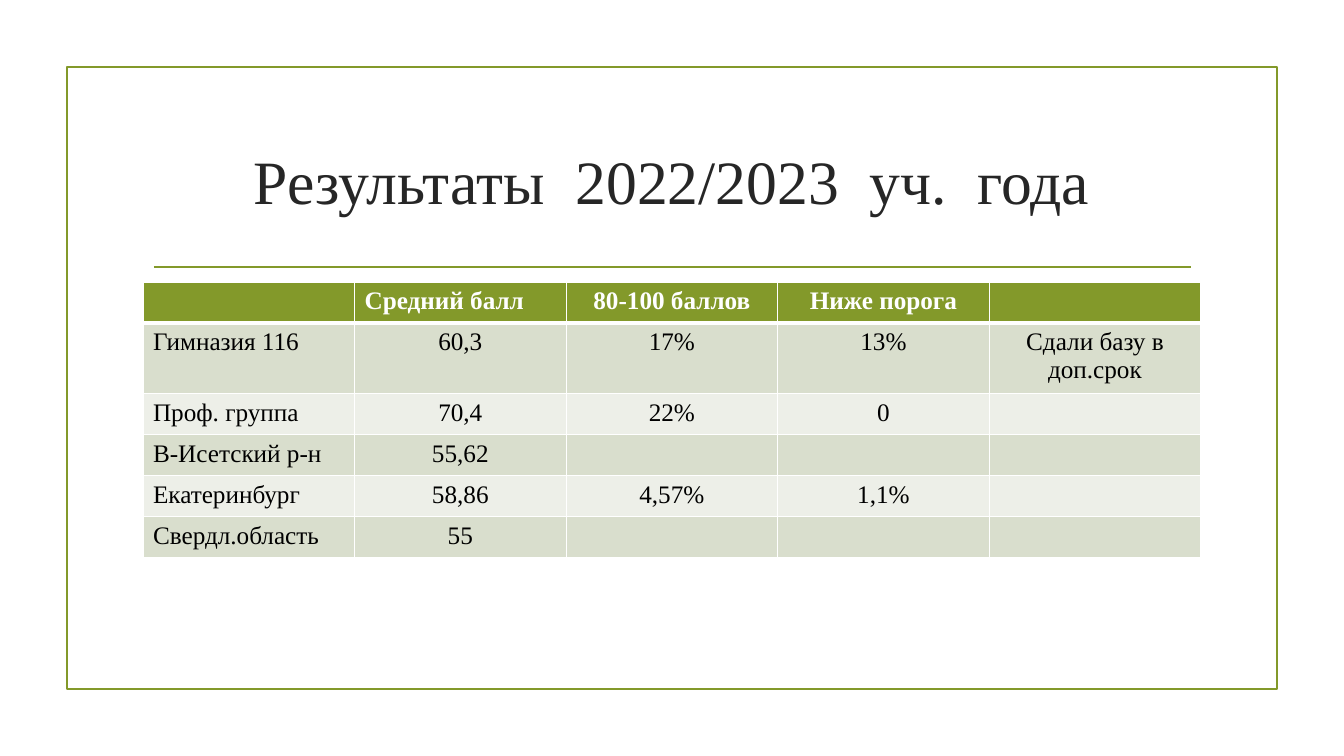
import lxml.etree
import pptx
import pptx.dml.color
import pptx.enum.shapes
import pptx.enum.text
import pptx.oxml.ns
import pptx.util

RGBColor = pptx.dml.color.RGBColor
GREEN = RGBColor(0x83, 0x99, 0x2A)
SAGE = RGBColor(0xD9, 0xDE, 0xCD)
PALE = RGBColor(0xED, 0xEF, 0xE8)
WHITE = RGBColor(0xFF, 0xFF, 0xFF)
BLACK = RGBColor(0, 0, 0)
DARK = RGBColor(0x26, 0x26, 0x26)

ALIGN = pptx.enum.text.PP_ALIGN
ANCHOR = pptx.enum.text.MSO_ANCHOR
SCALE = 914400 / 100.8
qn = pptx.oxml.ns.qn

SCORES = [
    ["", "Средний балл", "80-100 баллов", "Ниже порога", ""],
    ["Гимназия 116", "60,3", "17%", "13%", "Сдали базу в доп.срок"],
    ["Проф. группа", "70,4", "22%", "0", ""],
    ["В-Исетский р-н", "55,62", "", "", ""],
    ["Екатеринбург", "58,86", "4,57%", "1,1%", ""],
    ["Свердл.область", "55", "", "", ""],
]


def px(count):
    return pptx.util.Emu(round(count * SCALE))


def box(*sides):
    return [px(side) for side in sides]


def write(frame, text, size=18, color=BLACK, bold=False, align=ALIGN.CENTER):
    line = frame.paragraphs[0]
    line.alignment = align
    font = line.font
    if text:
        run = line.add_run()
        run.text = text
        font = run.font
    font.name = "Times New Roman"
    font.size = pptx.util.Pt(size)
    font.bold = bold
    font.color.rgb = color


def stroke(shape):
    shape.line.color.rgb = GREEN
    shape.line.width = pptx.util.Pt(1.25)


def add_frame(slide):
    kind = pptx.enum.shapes.MSO_SHAPE.RECTANGLE
    frame = slide.shapes.add_shape(kind, *box(67, 67, 1210, 622))
    frame.shadow.inherit = False
    frame.fill.background()
    stroke(frame)


def add_rule(slide):
    kind = pptx.enum.shapes.MSO_CONNECTOR.STRAIGHT
    rule = slide.shapes.add_connector(kind, *box(154, 267, 1191, 267))
    stroke(rule)
    lxml.etree.SubElement(rule._element.spPr, qn("a:effectLst"))


def add_title(slide, text):
    frame = slide.shapes.add_textbox(*box(143, 108, 1058, 144)).text_frame
    frame.word_wrap = True
    frame.vertical_anchor = ANCHOR.MIDDLE
    write(frame, text, size=44, color=DARK)


def edge(cell, **widths):
    props = cell._tc.get_or_add_tcPr()
    for place, side in enumerate("LRTB"):
        width = pptx.util.Pt(widths.get(side, 1))
        line = lxml.etree.Element(qn("a:ln" + side), w=str(width))
        fill = lxml.etree.SubElement(line, qn("a:solidFill"))
        lxml.etree.SubElement(fill, qn("a:srgbClr"), val=str(WHITE))
        props.insert(place, line)


def add_grid(slide, rows):
    wide = len(rows[0])
    shape = slide.shapes.add_table(
        len(rows), wide, *box(143, 282, 1058, 41 * len(rows)))
    grid = shape.table
    for r, row in enumerate(rows):
        head = r == 0
        for c, text in enumerate(row):
            cell = grid.cell(r, c)
            left = c == 0 or head and c == 1
            write(cell.text_frame, text, bold=head,
                  color=WHITE if head else BLACK,
                  align=ALIGN.LEFT if left else ALIGN.CENTER)
            cell.fill.solid()
            cell.fill.fore_color.rgb = GREEN if head else (PALE, SAGE)[r % 2]
            edge(cell, B=3 if head else 1, T=3 if r == 1 else 1)


def main():
    deck = pptx.Presentation()
    deck.slide_width, deck.slide_height = box(1344, 756)
    slide = deck.slides.add_slide(deck.slide_layouts[6])
    add_frame(slide)
    add_rule(slide)
    add_title(slide, "Результаты  2022/2023  уч.  года")
    add_grid(slide, SCORES)
    deck.save("out.pptx")


if __name__ == "__main__":
    main()
